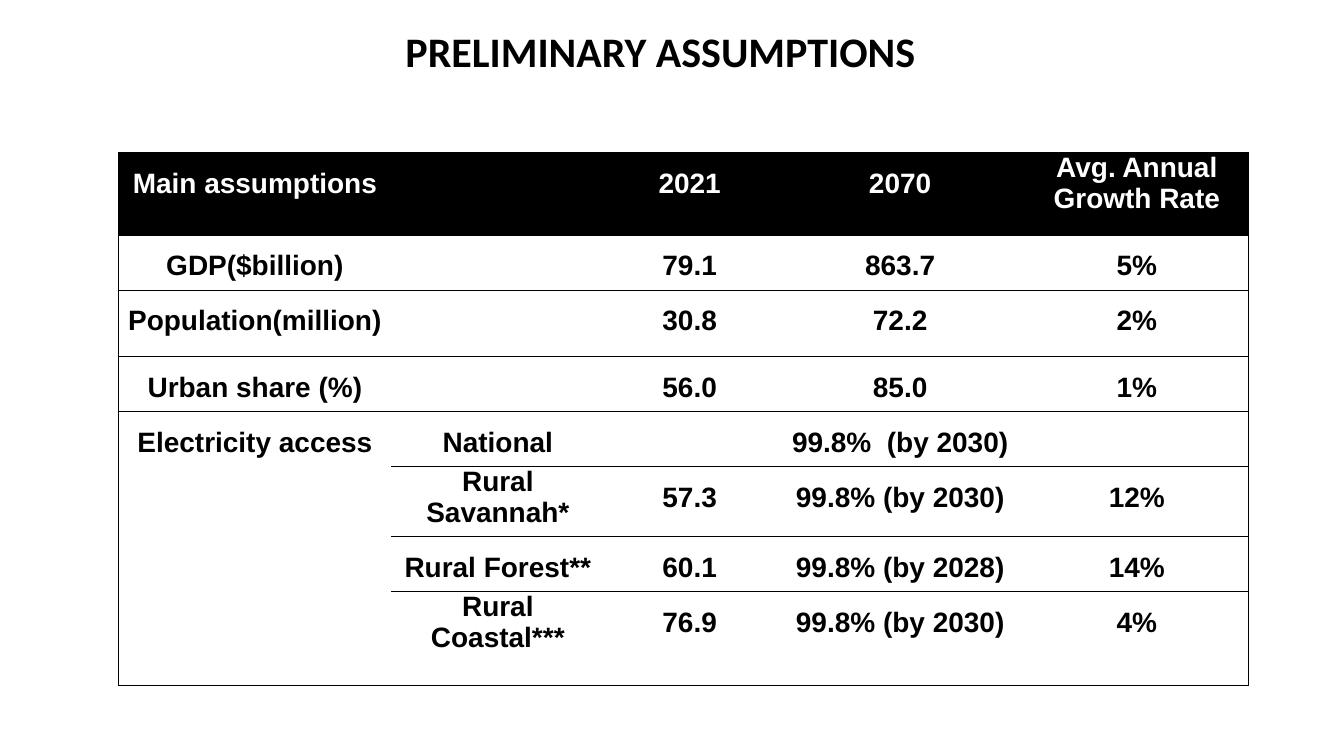
from dataclasses import dataclass

from lxml.etree import SubElement
from pptx import Presentation
from pptx.dml.color import RGBColor
from pptx.enum.text import PP_ALIGN as Align
from pptx.oxml.ns import qn
from pptx.slide import Slide
from pptx.table import _Cell as Cell
from pptx.text.text import _Paragraph as Paragraph
from pptx.util import Inches, Pt

BLACK = RGBColor(0x00, 0x00, 0x00)
WHITE = RGBColor(0xFF, 0xFF, 0xFF)

SLIDE_WIDTH, SLIDE_HEIGHT = Inches(26.66), Inches(15)

# Grid of the assumptions table, in inches
TABLE_LEFT, TABLE_TOP = 2.35, 3.02
COLUMN_WIDTHS = (5.41, 4.23, 3.38, 4.97, 4.42)
BORDER_WIDTH = Pt(0.75)


@dataclass(frozen=True)
class Assumption:
    height: float
    name: str = ""
    area: str = ""
    start: str = ""
    target: str = ""
    growth: str = ""

    @property
    def entries(self) -> tuple[str, ...]:
        return self.name, self.area, self.start, self.target, self.growth


ASSUMPTIONS = (
    Assumption(1.64, "Main assumptions", "", "2021", "2070", "Avg. Annual Growth Rate"),
    Assumption(1.09, "GDP($billion)", "", "79.1", "863.7", "5%"),
    Assumption(1.32, "Population(million)", "", "30.8", "72.2", "2%"),
    Assumption(1.09, "Urban share (%)", "", "56.0", "85.0", "1%"),
    Assumption(1.09, "Electricity access", "National", target="99.8%  (by 2030)"),
    Assumption(1.39, "", "Rural Savannah*", "57.3", "99.8% (by 2030)", "12%"),
    Assumption(1.09, "", "Rural Forest**", "60.1", "99.8% (by 2028)", "14%"),
    Assumption(1.87, "", "Rural Coastal***", "76.9", "99.8% (by 2030)", "4%"),
)
ACCESS_ROW = 4
LAST_ROW, LAST_COLUMN = len(ASSUMPTIONS) - 1, len(COLUMN_WIDTHS) - 1
# Entries that wrap onto two lines keep single line spacing
WRAPPED = {"Avg. Annual Growth Rate", "Rural Savannah*", "Rural Coastal***"}


def add_run(paragraph: Paragraph, text: str, font: str, size: int, color: RGBColor) -> None:
    run = paragraph.add_run()
    run.text = text
    run.font.name, run.font.size, run.font.bold = font, Pt(size), True
    run.font.color.rgb = color


def set_borders(cell: Cell, sides: dict[str, bool]) -> None:
    """Draw or clear each side; the lines must come before the cell's fill."""
    properties = cell._tc.get_or_add_tcPr()
    for position, (side, drawn) in enumerate(sides.items()):
        line = SubElement(properties, qn(f"a:ln{side}"), w=str(BORDER_WIDTH))
        if drawn:
            fill = SubElement(line, qn("a:solidFill"))
            SubElement(fill, qn("a:srgbClr"), val=str(BLACK))
        else:
            SubElement(line, qn("a:noFill"))
        properties.insert(position, line)


def fill_cell(cell: Cell, entry: str, is_header: bool) -> None:
    cell.margin_left = cell.margin_right = Inches(0.07)
    cell.margin_top = cell.margin_bottom = 0
    if is_header:
        cell.fill.solid()
        cell.fill.fore_color.rgb = BLACK
    else:
        cell.fill.background()
    if entry:
        paragraph = cell.text_frame.paragraphs[0]
        paragraph.alignment = Align.CENTER
        paragraph.line_spacing = 1.0 if entry in WRAPPED else 1.5
        paragraph.space_after = Pt(8)
        add_run(paragraph, entry, "Arial", 40, WHITE if is_header else BLACK)


def add_title(slide: Slide, title: str) -> None:
    box = slide.shapes.add_textbox(
        int(SLIDE_WIDTH * 0.298), int(SLIDE_HEIGHT * 0.03),
        int(SLIDE_WIDTH * 0.534), int(SLIDE_HEIGHT * 0.074))
    box.text_frame.word_wrap = True
    add_run(box.text_frame.paragraphs[0], title, "Calibri", 60, BLACK)


def add_assumptions(slide: Slide) -> None:
    table = slide.shapes.add_table(
        len(ASSUMPTIONS), len(COLUMN_WIDTHS), Inches(TABLE_LEFT), Inches(TABLE_TOP),
        Inches(sum(COLUMN_WIDTHS)), Inches(sum(row.height for row in ASSUMPTIONS))).table
    table.first_row = table.horz_banding = False
    for column, width in zip(table.columns, COLUMN_WIDTHS):
        column.width = Inches(width)

    for row, assumption in enumerate(ASSUMPTIONS):
        table.rows[row].height = Inches(assumption.height)
        for column, entry in enumerate(assumption.entries):
            cell = table.cell(row, column)
            fill_cell(cell, entry, is_header=row == 0)
            # Row lines stop at the merged access cell; only the frame is vertical
            in_access = column == 0 and row >= ACCESS_ROW
            set_borders(cell, {
                "L": column == 0,
                "R": column == LAST_COLUMN,
                "T": not in_access or row == ACCESS_ROW,
                "B": not in_access or row in (ACCESS_ROW, LAST_ROW),
            })
    table.cell(ACCESS_ROW, 0).merge(table.cell(LAST_ROW, 0))


def main() -> None:
    deck = Presentation()
    deck.slide_width, deck.slide_height = SLIDE_WIDTH, SLIDE_HEIGHT
    slide = deck.slides.add_slide(deck.slide_layouts[6])
    add_assumptions(slide)
    add_title(slide, "PRELIMINARY ASSUMPTIONS")
    deck.save("out.pptx")


if __name__ == "__main__":
    main()
